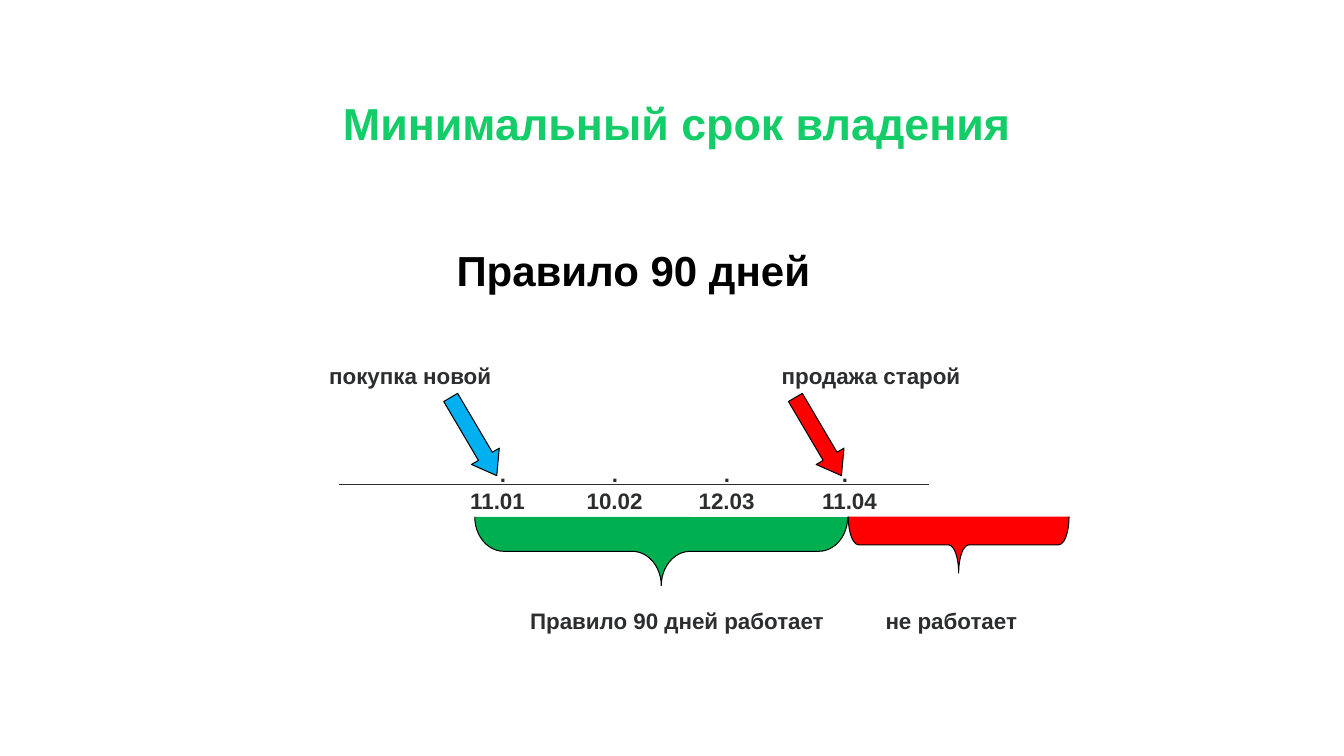
from pptx import Presentation
from pptx.dml.color import RGBColor
from pptx.enum.shapes import MSO_CONNECTOR, MSO_SHAPE
from pptx.enum.text import MSO_ANCHOR, PP_ALIGN
from pptx.oxml.ns import qn
from pptx.util import Pt
from lxml.etree import SubElement

INK = "2C2D2E"

deck = Presentation()
deck.slide_width, deck.slide_height = Pt(960), Pt(540)
page = deck.slides.add_slide(deck.slide_layouts[6])


def color(value):
    return RGBColor.from_string(value)


def add_text(text, center_x, center_y, width=220, size=16, ink=INK):
    height = size * 1.5
    box = page.shapes.add_textbox(Pt(center_x - width / 2), Pt(center_y - height / 2),
                                  Pt(width), Pt(height))
    frame = box.text_frame
    frame.word_wrap = True
    frame.vertical_anchor = MSO_ANCHOR.MIDDLE
    frame.margin_left = frame.margin_right = frame.margin_top = frame.margin_bottom = 0
    para = frame.paragraphs[0]
    para.alignment = PP_ALIGN.CENTER
    span = para.add_run()
    span.text = text
    span.font.name = "Arial"
    span.font.size = Pt(size)
    span.font.bold = True
    span.font.color.rgb = color(ink)


# Headings
add_text("Минимальный срок владения", 483.6, 87.3, width=847, size=32, ink="14CD68")
add_text("Правило 90 дней", 452.5, 193, width=400, size=30, ink="000000")

# Event and period labels
for label, center_x, center_y in [
    ("покупка новой", 293, 268.3),
    ("продажа старой", 622.2, 268.3),
    ("Правило 90 дней работает", 483.6, 443.3),
    ("не работает", 679.5, 443.3),
]:
    add_text(label, center_x, center_y)

# Timeline
timeline = page.shapes.add_connector(MSO_CONNECTOR.STRAIGHT, Pt(242), Pt(346), Pt(663.5), Pt(346))
timeline.line.color.rgb = color(INK)
timeline.line.width = Pt(1.25)
SubElement(timeline.element.spPr, qn("a:effectLst"))

# Dots and dates
for date, dot_x, date_x in [
    ("11.01", 359.3, 355.4),
    ("10.02", 439.3, 439),
    ("12.03", 519.3, 519),
    ("11.04", 603.6, 606.8),
]:
    add_text(".", dot_x, 338.3, width=20)
    add_text(date, date_x, 357.7, width=70)

# Arrows and braces
arrow, brace = MSO_SHAPE.DOWN_ARROW, MSO_SHAPE.RIGHT_BRACE
for kind, left, top, width, height, turn, adjustments, fill in [
    (arrow, 326.9, 279.4, 23, 64.8, 329.5, (0.5, 0.695), "00B0F0"),
    (arrow, 573.1, 279.4, 23, 64.8, 329.5, (0.5, 0.695), "FF0000"),
    (brace, 447.8, 260.6, 49, 266.4, 90, (0.423, 0.5), "00B050"),
    (brace, 664.6, 310.3, 40.3, 157.7, 90, (0.182, 0.5), "FF0000"),
]:
    shape = page.shapes.add_shape(kind, Pt(left), Pt(top), Pt(width), Pt(height))
    shape.rotation = turn
    for index, value in enumerate(adjustments):
        shape.adjustments[index] = value
    shape.shadow.inherit = False
    shape.fill.solid()
    shape.fill.fore_color.rgb = color(fill)
    shape.line.color.rgb = color("000000")
    shape.line.width = Pt(0.75)

deck.save("out.pptx")
